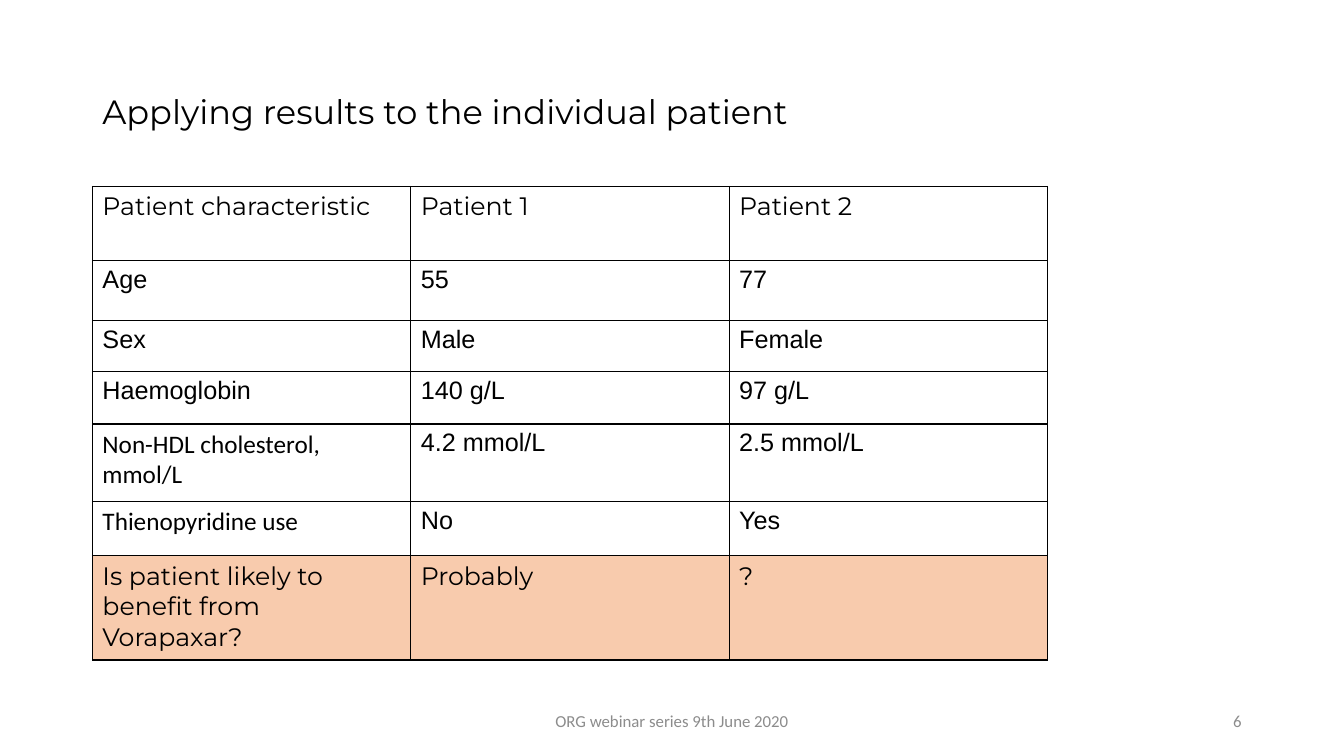
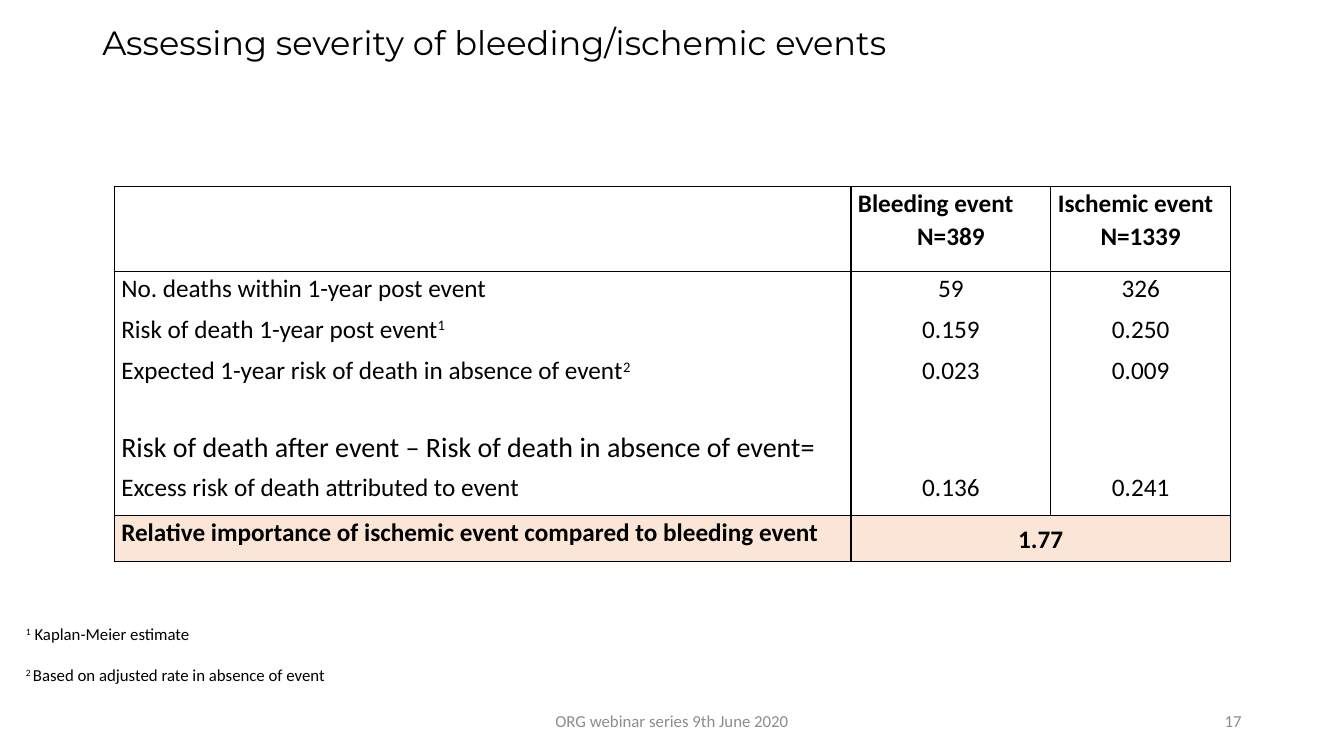
import pptx
import pptx.util
import pptx.dml.color
import pptx.enum.text
import pptx.oxml
import pptx.oxml.ns

COLORS = {"ink": "000000", "paper": "FFFFFF", "gray": "8C8C8C",
          "peach": "F8CBAD", "blush": "FBE5D6"}
FONTS = {"head": "Montserrat", "body": "Calibri", "data": "Arial"}
ALIGN = {"l": pptx.enum.text.PP_ALIGN.LEFT,
         "c": pptx.enum.text.PP_ALIGN.CENTER,
         "r": pptx.enum.text.PP_ALIGN.RIGHT}
MIDDLE = pptx.enum.text.MSO_ANCHOR.MIDDLE
FOOTER = "ORG webinar series 9th June 2020"
GRID = 160


def tint(name):
    return pptx.dml.color.RGBColor.from_string(COLORS[name])


def write(frame, text, font="body", size=18, color="ink", bold=False,
          align="l", line=None, gap=0):
    for i, part in enumerate(text.split("\n")):
        para = frame.add_paragraph() if i else frame.paragraphs[0]
        para.alignment = ALIGN[align[min(i, len(align) - 1)]]
        para.line_spacing = line
        para.space_before = pptx.util.Pt(gap if i else 0)
        for j, piece in enumerate(part.split("^")):
            if not piece:
                continue
            run = para.add_run()
            run.text = piece
            run.font.name = FONTS[font]
            run.font.size = pptx.util.Pt(size)
            run.font.bold = bold
            run.font.color.rgb = tint(color)
            if j % 2:
                run._r.get_or_add_rPr().set("baseline", "30000")


def border(cell, edges):
    props = cell._tc.get_or_add_tcPr()
    space = pptx.oxml.ns.nsdecls("a")
    ink = f'<a:solidFill><a:srgbClr val="{COLORS["ink"]}"/></a:solidFill>'
    for side in "LRTB":
        paint = ink if side in edges else "<a:noFill/>"
        props.append(pptx.oxml.parse_xml(
            f'<a:ln{side} {space} w="12700">{paint}</a:ln{side}>'))


class Deck:
    def __init__(self):
        self.show = pptx.Presentation()
        self.show.slide_width = pptx.util.Inches(13.33)
        self.show.slide_height = pptx.util.Inches(7.5)
        self.slide = None

    def grid(self, *counts):
        return [round(n * self.show.slide_width / GRID) for n in counts]

    def start(self, title, top, height, number):
        self.slide = self.show.slides.add_slide(self.show.slide_layouts[6])
        self.text(title, (11, top, 138, height), MIDDLE,
                  font="head", size=24, line=0.9)
        for words, left, width, align in ((FOOTER, 53, 54, "c"),
                                          (str(number), 113, 36, "r")):
            self.text(words, (left, 83.4, width, 4.8), MIDDLE,
                      size=12, color="gray", align=align)

    def text(self, words, place, anchor=None, **style):
        frame = self.slide.shapes.add_textbox(*self.grid(*place)).text_frame
        frame.word_wrap = True
        frame.vertical_anchor = anchor
        write(frame, words, **style)

    def table(self, left, top, cols, rows, data, look, inset=None):
        place = self.grid(left, top, sum(cols), sum(rows))
        table = self.slide.shapes.add_table(
            len(rows), len(cols), *place).table
        table.first_row = table.horz_banding = False
        for col, width in zip(table.columns, self.grid(*cols)):
            col.width = width
        for row, height in zip(table.rows, self.grid(*rows)):
            row.height = height
        for r, line in enumerate(data):
            for c, words in enumerate(line):
                cell = table.cell(r, c)
                fill, edges, style = look(r, c)
                border(cell, edges)
                cell.fill.solid()
                cell.fill.fore_color.rgb = tint(fill)
                if words and inset is not None:
                    cell.margin_left = cell.margin_right = inset
                    cell.margin_top = cell.margin_bottom = 0
                if words:
                    write(cell.text_frame, words, **style)
        return table

    def save(self):
        self.show.save("out.pptx")


def patient(deck):
    data = [
        ("Patient characteristic", "Patient 1", "Patient 2"),
        ("Age", "55", "77"),
        ("Sex", "Male", "Female"),
        ("Haemoglobin", "140 g/L", "97 g/L"),
        ("Non-HDL cholesterol, mmol/L", "4.2 mmol/L", "2.5 mmol/L"),
        ("Thienopyridine use", "No", "Yes"),
        ("Is patient likely to benefit from Vorapaxar?", "Probably", "?"),
    ]
    last = len(data) - 1

    def look(r, c):
        font = "data"
        if r in (0, last):
            font = "head"
        elif c == 0 and r in (4, 5):
            font = "body"
        return "peach" if r == last else "paper", "LRTB", {"font": font}

    deck.start("Applying results to the individual patient", 4.8, 17.4, 6)
    deck.table(11, 22.2, [37.9] * 3, [8.8, 7.2, 6, 6.3, 9.2, 6.5, 12.4],
               data, look)


def events(deck):
    data = [
        ("", "Bleeding event\nN=389", "Ischemic event\nN=1339"),
        ("No. deaths within 1-year post event", "59", "326"),
        ("Risk of death 1-year post event^1^", "0.159", "0.250"),
        ("Expected 1-year risk of death in absence of event^2^",
         "0.023", "0.009"),
        ("Risk of death after event – Risk of death in absence of event=",
         "", ""),
        ("Excess risk of death attributed to event", "0.136", "0.241"),
        ("Relative importance of ischemic event compared to bleeding event",
         "1.77", ""),
    ]
    last = len(data) - 1
    sides = {0: "LRTB", 1: "LRT", last - 1: "LRB", last: "LRTB"}

    def look(r, c):
        align = "l" if c == 0 else "lc" if r == 0 else "c"
        style = {"align": align, "bold": r in (0, last),
                 "size": 20 if r == 4 else 18, "line": 1.07}
        return "blush" if r == last else "paper", sides.get(r, "LR"), style

    deck.start("Assessing severity of bleeding/ischemic events", 1.8, 7.1, 17)
    table = deck.table(13.6, 22.2, [87.7, 23.8, 21.4],
                       [10.1, 4.9, 4.9, 8.9, 5, 5.4, 5.5],
                       data, look, pptx.util.Inches(0.07))
    table.cell(last, 1).merge(table.cell(last, 2))
    table.cell(last, 1).vertical_anchor = MIDDLE
    deck.text("^1^ Kaplan-Meier estimate\n"
              "^2 ^Based on adjusted rate in absence of event",
              (1.9, 73.7, 96.1, 10.9), size=12, gap=14.6)


def main():
    deck = Deck()
    patient(deck)
    events(deck)
    deck.save()


if __name__ == "__main__":
    main()
